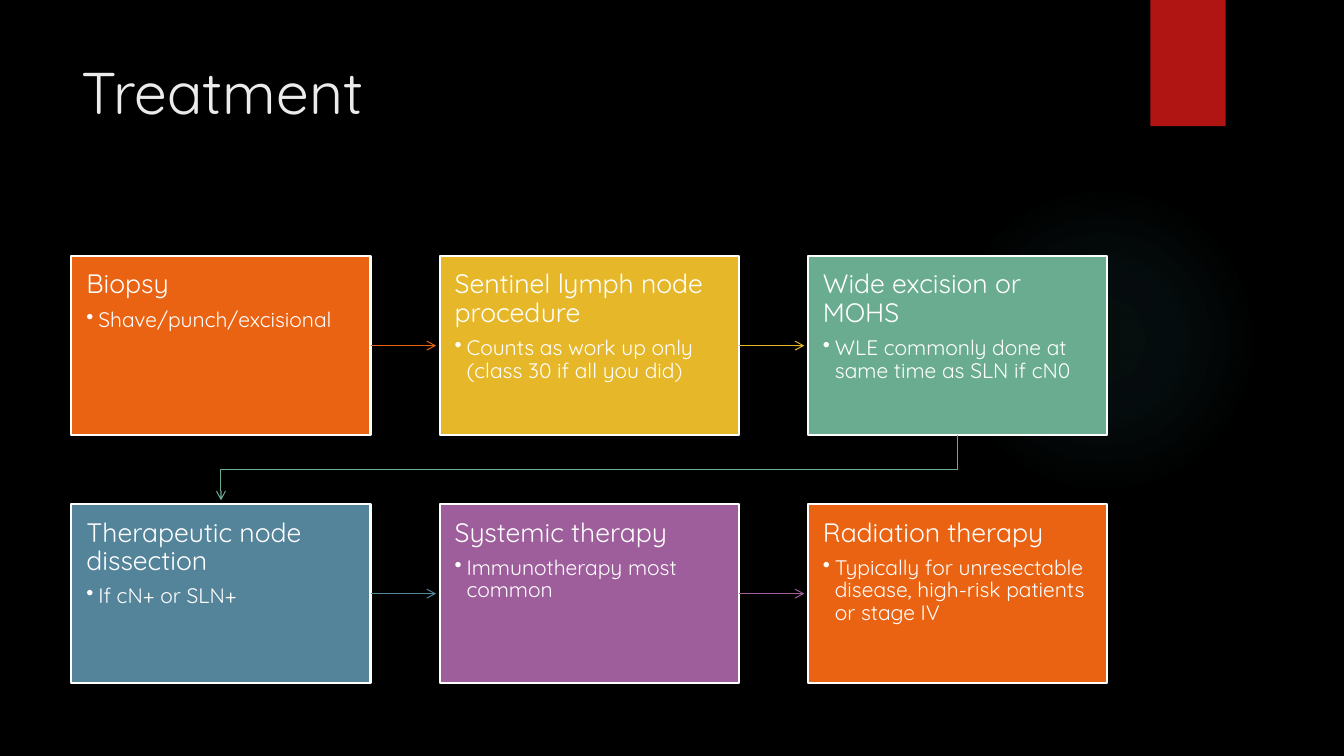
from pptx import Presentation
from pptx.dml.color import RGBColor
from pptx.enum.shapes import MSO_CONNECTOR, MSO_SHAPE
from pptx.enum.text import MSO_ANCHOR, PP_ALIGN
from pptx.oxml import parse_xml
from pptx.oxml.ns import nsdecls, qn
from pptx.util import Cm, Pt
from lxml.etree import SubElement

COLORS = {
    "background": "000000",
    "glow": "50B9C1",
    "tab": "B01513",
    "title": "EBEBEB",
    "white": "FFFFFF",
    "orange": "EA6312",
    "yellow": "E6B729",
    "green": "6AAC90",
    "blue": "54849A",
    "purple": "9E5E9B",
}
FONT = "Quicksand"
STEPS = [
    ("Biopsy", "Shave/punch/excisional", "orange"),
    ("Sentinel lymph node procedure",
     "Counts as work up only (class 30 if all you did)", "yellow"),
    ("Wide excision or MOHS",
     "WLE commonly done at same time as SLN if cN0", "green"),
    ("Therapeutic node dissection", "If cN+ or SLN+", "blue"),
    ("Systemic therapy", "Immunotherapy most common", "purple"),
    ("Radiation therapy",
     "Typically for unresectable disease, high-risk patients or stage IV", "orange"),
]
COLUMNS = 3
LEFT, TOP = Cm(1.8), Cm(6.45)
STEP_WIDTH, STEP_HEIGHT = Cm(7.54), Cm(4.52)
COLUMN_PITCH, ROW_PITCH = Cm(9.28), Cm(6.25)
ARROW_GAP = Cm(0.09)


def rgb(name):
    return RGBColor.from_string(COLORS[name])


def style_text(paragraph, size, color):
    paragraph.alignment = PP_ALIGN.LEFT
    paragraph.font.name = FONT
    paragraph.font.size = Pt(size)
    paragraph.font.color.rgb = rgb(color)


def add_glow(slide):
    glow = slide.shapes.add_shape(
        MSO_SHAPE.OVAL, Cm(23.9), Cm(4.65), Cm(7.82), Cm(7.82))
    glow.shadow.inherit = False
    stops = "".join(
        f'<a:gs pos="{position * 1000}"><a:srgbClr val="{COLORS["glow"]}">'
        f'<a:alpha val="{opacity * 1000}"/></a:srgbClr></a:gs>'
        for position, opacity in [(0, 7), (36, 6), (69, 0), (100, 0)])
    gradient = parse_xml(
        f'<a:gradFill {nsdecls("a")}><a:gsLst>{stops}</a:gsLst><a:path path="circle">'
        '<a:fillToRect l="50000" t="50000" r="50000" b="50000"/></a:path></a:gradFill>')
    glow.element.spPr.find(qn("a:prstGeom")).addnext(gradient)
    glow.line.fill.background()


def add_block(slide, left, top, width, height, color):
    block = slide.shapes.add_shape(MSO_SHAPE.RECTANGLE, left, top, width, height)
    block.shadow.inherit = False
    block.fill.solid()
    block.fill.fore_color.rgb = rgb(color)
    block.line.fill.background()
    return block


def add_title(slide, text):
    title = slide.shapes.add_textbox(LEFT, Cm(1.27), Cm(26.14), Cm(3.89))
    title.text_frame.word_wrap = True
    title.text_frame.text = text
    style_text(title.text_frame.paragraphs[0], 42, "title")


def add_step(slide, left, top, heading, detail, color):
    step = add_block(slide, left, top, STEP_WIDTH, STEP_HEIGHT, color)
    step.line.color.rgb = rgb("white")
    step.line.width = Pt(1.5)
    frame = step.text_frame
    frame.word_wrap = True
    frame.vertical_anchor = MSO_ANCHOR.TOP
    frame.margin_left = frame.margin_right = Cm(0.38)
    frame.margin_top = frame.margin_bottom = Cm(0.38)
    frame.text = heading
    head = frame.paragraphs[0]
    bullet = frame.add_paragraph()
    bullet.text = detail
    properties = bullet._p.get_or_add_pPr()
    properties.set("marL", str(Cm(0.3)))
    properties.set("indent", str(-Cm(0.3)))
    SubElement(properties, qn("a:buChar")).set("char", "•")
    for paragraph, size, after in [(head, 19, 6.65), (bullet, 15, 2.25)]:
        paragraph.line_spacing = 0.9
        paragraph.space_after = Pt(after)
        style_text(paragraph, size, "white")


def style_arrow(arrow, color):
    arrow.line.color.rgb = rgb(color)
    arrow.line.width = Pt(0.75)
    outline = arrow.element.spPr.find(qn("a:ln"))
    SubElement(outline, qn("a:tailEnd")).set("type", "arrow")


def add_straight_arrow(slide, left, top, color):
    start = left + STEP_WIDTH
    middle = top + STEP_HEIGHT // 2
    arrow = slide.shapes.add_connector(
        MSO_CONNECTOR.STRAIGHT, start, middle, left + COLUMN_PITCH - ARROW_GAP, middle)
    style_arrow(arrow, color)
    SubElement(arrow.element.spPr, qn("a:effectLst"))


def add_return_arrow(slide, left, top, color):
    start_x = left + STEP_WIDTH // 2
    end_x = LEFT + STEP_WIDTH // 2
    start_y = top + STEP_HEIGHT
    bend_y = (start_y + top + ROW_PITCH) // 2
    route = slide.shapes.build_freeform(start_x, start_y)
    route.add_line_segments(
        [(start_x, bend_y), (end_x, bend_y), (end_x, top + ROW_PITCH - ARROW_GAP)],
        close=False)
    arrow = route.convert_to_shape()
    arrow.shadow.inherit = False
    arrow.fill.background()
    style_arrow(arrow, color)


def main():
    presentation = Presentation()
    presentation.slide_width, presentation.slide_height = Cm(33.87), Cm(19.05)
    slide = presentation.slides.add_slide(presentation.slide_layouts[6])
    slide.background.fill.solid()
    slide.background.fill.fore_color.rgb = rgb("background")
    add_glow(slide)
    add_block(slide, Cm(28.99), 0, Cm(1.9), Cm(3.18), "tab")
    add_title(slide, "Treatment")
    for index, (heading, detail, color) in enumerate(STEPS):
        row, column = divmod(index, COLUMNS)
        left = LEFT + column * COLUMN_PITCH
        top = TOP + row * ROW_PITCH
        add_step(slide, left, top, heading, detail, color)
        if column < COLUMNS - 1:
            add_straight_arrow(slide, left, top, color)
        elif index < len(STEPS) - 1:
            add_return_arrow(slide, left, top, color)
    presentation.save("out.pptx")


if __name__ == "__main__":
    main()
